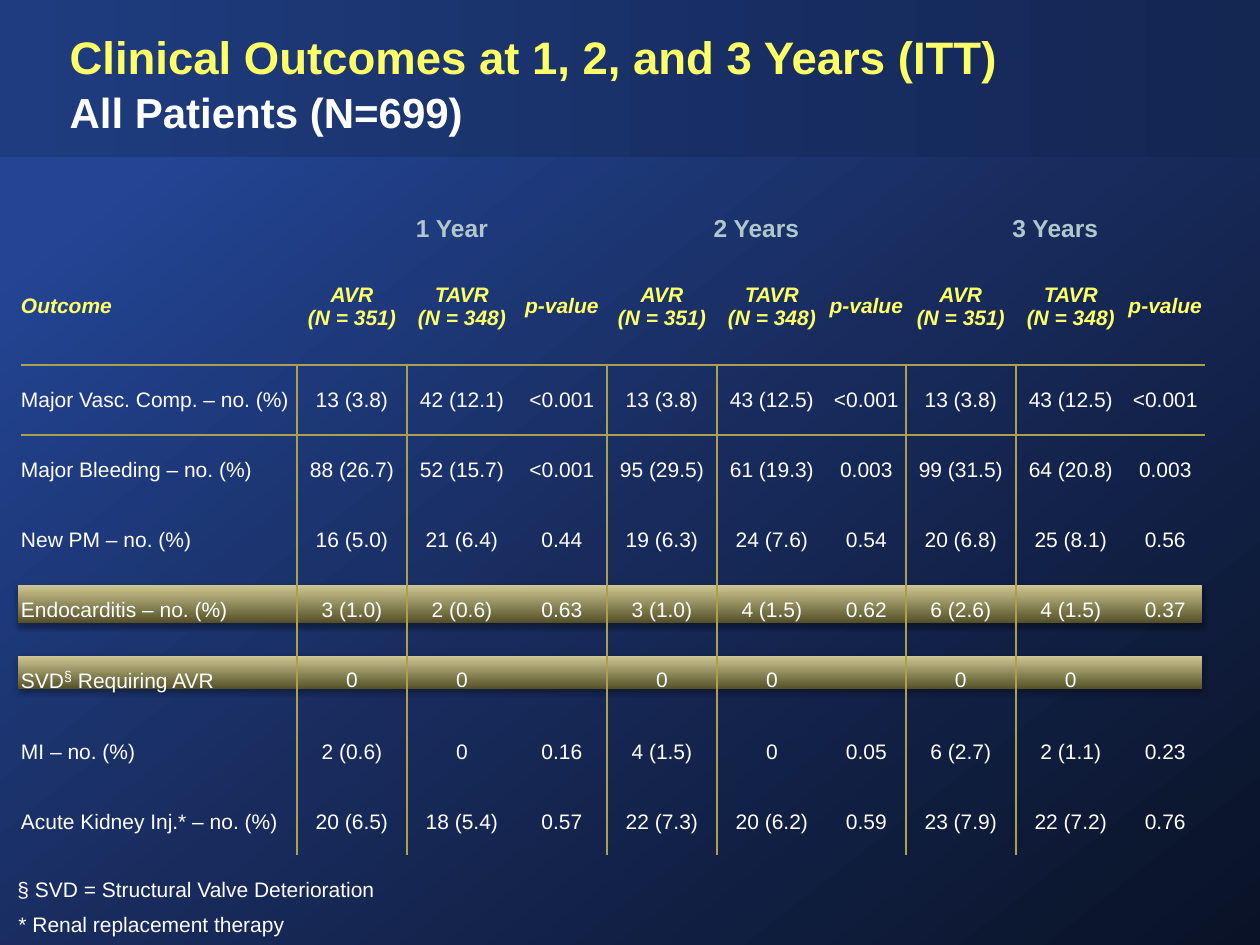
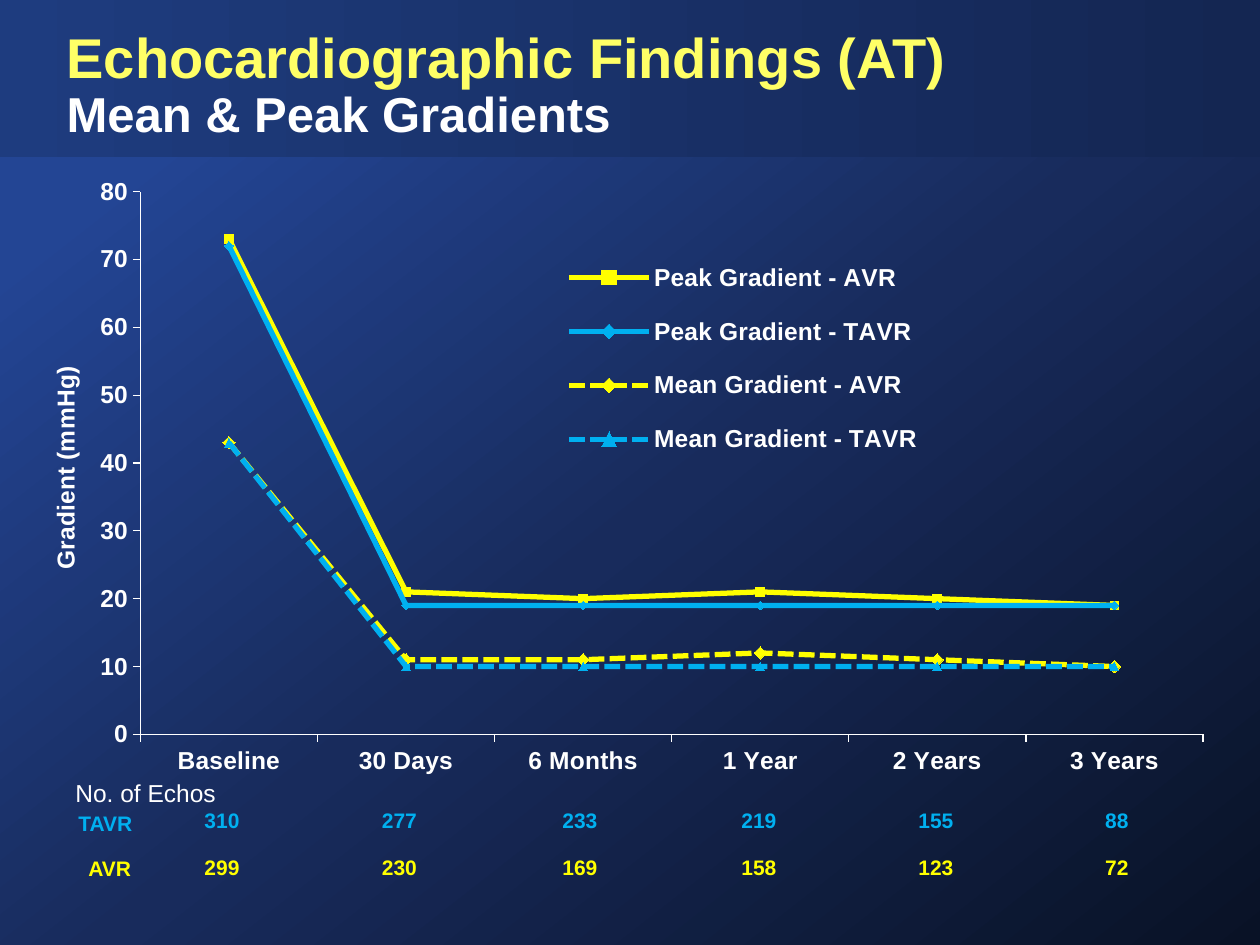
from dataclasses import dataclass

from pptx import Presentation
from pptx.chart.data import CategoryChartData
from pptx.dml.color import RGBColor
from pptx.enum.chart import XL_CHART_TYPE, XL_LEGEND_POSITION, XL_MARKER_STYLE, XL_TICK_MARK
from pptx.enum.dml import MSO_LINE
from pptx.enum.shapes import MSO_SHAPE
from pptx.enum.text import MSO_ANCHOR, PP_ALIGN
from pptx.oxml import parse_xml
from pptx.oxml.ns import nsdecls, qn
from pptx.util import Pt

LEFT, CENTER = PP_ALIGN.LEFT, PP_ALIGN.CENTER
MIDDLE = MSO_ANCHOR.MIDDLE
RECT = MSO_SHAPE.RECTANGLE
LINE_MARKERS = XL_CHART_TYPE.LINE_MARKERS
LEGEND_RIGHT = XL_LEGEND_POSITION.RIGHT
OUTSIDE = XL_TICK_MARK.OUTSIDE
SQUARE, DIAMOND, TRIANGLE = XL_MARKER_STYLE.SQUARE, XL_MARKER_STYLE.DIAMOND, XL_MARKER_STYLE.TRIANGLE
SOLID, DASH = MSO_LINE.SOLID, MSO_LINE.SQUARE_DOT
NO_STYLE = "{2D5ABB26-0587-4C30-8999-92F81FD0307C}"
TITLE_ONLY = 5
PX = 914400 / 126


@dataclass(frozen=True)
class Theme:
    font: str = "Arial"
    white: str = "FFFFFF"
    heading: str = "FFFF66"
    period: str = "B0C8CD"
    rule: str = "AAA04E"
    avr: str = "FFFF00"
    tavr: str = "00B0F0"
    backdrop: tuple = ((14, "234594"), (53, "182B5C"), (100, "091226"))
    band: tuple = ((0, "1E3C7F"), (100, "142652"))
    highlight: tuple = ((0, "555027"), (100, "CEC793"))
    body: int = 12
    label: int = 14
    title_leading: int = 30


def emu(*lengths):
    return [round(n * PX) for n in lengths]


def rgb(color):
    return RGBColor.from_string(color)


def place(parent, x, y, w=None, h=None, inner=False):
    old = parent.find(qn("c:layout"))
    if old is not None:
        parent.remove(old)
    target = '<c:layoutTarget val="inner"/>' if inner else ""
    sizes = "".join(f'<c:{k} val="{v}"/>' for k, v in (("x", x), ("y", y), ("w", w), ("h", h)) if v is not None)
    layout = parse_xml(
        f'<c:layout {nsdecls("c")}><c:manualLayout>{target}<c:xMode val="edge"/>'
        f'<c:yMode val="edge"/>{sizes}</c:manualLayout></c:layout>')
    overlay = parent.find(qn("c:overlay"))
    if overlay is None:
        parent.insert(0, layout)
    else:
        overlay.addprevious(layout)


class Deck:
    def __init__(self, theme):
        self.theme = theme
        self.prs = Presentation()
        self.prs.slide_width, self.prs.slide_height = emu(1260, 945)
        self.layout = self.prs.slide_layouts[TITLE_ONLY]
        self.s = None

    def slide(self):
        first = self.s is None
        self.s = self.prs.slides.add_slide(self.layout)
        if first:
            shared = (self.gradient_box(0, 0, 1260, 945, self.theme.backdrop, 52),
                      self.gradient_box(0, 0, 1260, 157, self.theme.band, 0))
            for i, sp in enumerate(shared):
                self.layout.shapes.element.insert(2 + i, sp.element)

    def format(self, p, size, color, bold=False, italic=False, align=LEFT):
        p.alignment = align
        for r in p.runs:
            r.font.name = self.theme.font
            r.font.size = Pt(size)
            r.font.bold = bold
            r.font.italic = italic
            r.font.color.rgb = rgb(color)

    def title(self, x, y, w, h, heading, subtitle, sizes):
        sp = self.s.shapes.title
        sp.left, sp.top, sp.width, sp.height = emu(x, y, w, h)
        tf = sp.text_frame
        tf.text = f"{heading}\v{subtitle}"
        tf.vertical_anchor = MIDDLE
        p = tf.paragraphs[0]
        p.line_spacing = Pt(self.theme.title_leading)
        self.format(p, sizes[0], self.theme.heading, bold=True)
        r = p.runs[1]
        r.font.size = Pt(sizes[1])
        r.font.color.rgb = rgb(self.theme.white)

    def gradient_box(self, x, y, w, h, stops, angle, shadow=False):
        sp = self.s.shapes.add_shape(RECT, *emu(x, y, w, h))
        sp.shadow.inherit = False
        sp.line.fill.background()
        sp.fill.background()
        gs = "".join(f'<a:gs pos="{pos * 1000}"><a:srgbClr val="{c}"/></a:gs>' for pos, c in stops)
        spPr = sp.element.spPr
        spPr.replace(spPr.find(qn("a:noFill")), parse_xml(
            f'<a:gradFill {nsdecls("a")} rotWithShape="1"><a:gsLst>{gs}</a:gsLst>'
            f'<a:lin ang="{angle * 60000}" scaled="0"/></a:gradFill>'))
        if shadow:
            spPr.find(qn("a:effectLst")).append(parse_xml(
                f'<a:outerShdw {nsdecls("a")} blurRad="40000" dist="23000" dir="5400000" rotWithShape="0">'
                '<a:srgbClr val="000000"><a:alpha val="35000"/></a:srgbClr></a:outerShdw>'))
        return sp

    def text(self, x, y, w, h, text, size, color, bold=False, wrap=True):
        tf = self.s.shapes.add_textbox(*emu(x, y, w, h)).text_frame
        tf.word_wrap = wrap
        tf.text = text
        self.format(tf.paragraphs[0], size, color, bold)

    def table(self, x, y, cols, rows):
        frame = self.s.shapes.add_table(len(rows), len(cols), *emu(x, y, sum(cols), sum(rows)))
        table = frame.table
        table.first_row = table.horz_banding = False
        frame.element.find(".//" + qn("a:tableStyleId")).text = NO_STYLE
        for col, width in zip(table.columns, emu(*cols)):
            col.width = width
        for row, height in zip(table.rows, emu(*rows)):
            row.height = height
        for cell in table.iter_cells():
            cell.fill.background()
            cell.vertical_anchor = MIDDLE
        return table

    def cell(self, cell, text, size, color, bold=False, italic=False, align=CENTER, inset=5, spacing=None):
        cell.margin_left, cell.margin_right, cell.margin_top, cell.margin_bottom = emu(inset, inset, 0, 0)
        cell.text = text
        for p in cell.text_frame.paragraphs:
            self.format(p, size, color, bold, italic, align)
            if spacing:
                p.line_spacing = spacing

    def borders(self, cell, **widths):
        tcPr = cell._tc.get_or_add_tcPr()
        sides = [side for side in "LRTB" if widths.get(side)]
        for i, side in enumerate(sides):
            tcPr.insert(i, parse_xml(
                f'<a:ln{side} {nsdecls("a")} w="{Pt(widths[side])}"><a:solidFill>'
                f'<a:srgbClr val="{self.theme.rule}"/></a:solidFill></a:ln{side}>'))

    def line_chart(self, x, y, w, h, cats, series, axis_title):
        data = CategoryChartData()
        data.categories = cats
        for name, values, *_ in series:
            data.add_series(name, values)
        chart = self.s.shapes.add_chart(LINE_MARKERS, *emu(x, y, w, h), data).chart
        white = rgb(self.theme.white)
        chart.has_title = False
        font = chart.font
        font.name, font.size, font.bold = self.theme.font, Pt(self.theme.label), True
        font.color.rgb = white
        chart.plots[0].vary_by_categories = False
        for ser, (_, _, color, dash, marker, size) in zip(chart.plots[0].series, series):
            ser.smooth = False
            ser.format.line.color.rgb = rgb(color)
            ser.format.line.width = Pt(3)
            ser.format.line.dash_style = dash
            ser.marker.style, ser.marker.size = marker, size
            ser.marker.format.fill.solid()
            ser.marker.format.fill.fore_color.rgb = rgb(color)
            ser.marker.format.line.color.rgb = rgb(color)
        for axis in (chart.category_axis, chart.value_axis):
            axis.major_tick_mark = OUTSIDE
            axis.has_major_gridlines = False
            axis.format.line.color.rgb = white
        axis = chart.value_axis
        axis.minimum_scale, axis.maximum_scale, axis.major_unit = 0, 80, 10
        tf = axis.axis_title.text_frame
        tf.text = axis_title
        self.format(tf.paragraphs[0], self.theme.label, self.theme.white, bold=True, align=CENTER)
        chart.has_legend = True
        chart.legend.position = LEGEND_RIGHT
        chart.legend.include_in_layout = False
        return chart


def outcomes_slide(deck):
    t = deck.theme
    deck.slide()
    for y, h in ((656, 33), (585, 38)):
        deck.gradient_box(18, y, 1184, h, t.highlight, 270, shadow=True)

    outcomes = [
        ("Major Vasc. Comp. – no. (%)", "13 (3.8)", "42 (12.1)", "<0.001",
         "13 (3.8)", "43 (12.5)", "<0.001", "13 (3.8)", "43 (12.5)", "<0.001"),
        ("Major Bleeding – no. (%)", "88 (26.7)", "52 (15.7)", "<0.001",
         "95 (29.5)", "61 (19.3)", "0.003", "99 (31.5)", "64 (20.8)", "0.003"),
        ("New PM – no. (%)", "16 (5.0)", "21 (6.4)", "0.44",
         "19 (6.3)", "24 (7.6)", "0.54", "20 (6.8)", "25 (8.1)", "0.56"),
        ("Endocarditis – no. (%)", "3 (1.0)", "2 (0.6)", "0.63",
         "3 (1.0)", "4 (1.5)", "0.62", "6 (2.6)", "4 (1.5)", "0.37"),
        ("SVD", "0", "0", "", "0", "0", "", "0", "0", ""),
        ("MI – no. (%)", "2 (0.6)", "0", "0.16",
         "4 (1.5)", "0", "0.05", "6 (2.7)", "2 (1.1)", "0.23"),
        ("Acute Kidney Inj.* – no. (%)", "20 (6.5)", "18 (5.4)", "0.57",
         "22 (7.3)", "20 (6.2)", "0.59", "23 (7.9)", "22 (7.2)", "0.76"),
    ]
    table = deck.table(21, 197, [276, 110, 110, 90] + [110, 110, 79] * 2, [40, 117] + [70] * len(outcomes))
    for i, period in enumerate(("1 Year", "2 Years", "3 Years")):
        cell = table.cell(0, 1 + 3 * i)
        cell.merge(table.cell(0, 3 + 3 * i))
        deck.cell(cell, period, t.label, t.period, bold=True, spacing=1.5)
    headers = ["Outcome"] + ["AVR\n(N = 351)", "TAVR\n(N = 348)", "p-value"] * 3
    for j, header in enumerate(headers):
        cell = table.cell(1, j)
        deck.cell(cell, header, t.body, t.heading, bold=True, italic=True, align=CENTER if j else LEFT, inset=0)
        deck.borders(cell, B=1.5)
    for i, row in enumerate(outcomes):
        for j, value in enumerate(row):
            cell = table.cell(i + 2, j)
            deck.cell(cell, value, t.body, t.white, align=CENTER if j else LEFT,
                      inset=5 if j else 0, spacing=1.15 if i > 4 else None)
            deck.borders(cell, L=1 if j in (1, 4, 7) else 0, R=1 if j in (0, 3, 6) else 0, T=0 if i else 1.5)
    p = table.cell(6, 0).text_frame.paragraphs[0]
    for text in ("§", " Requiring AVR"):
        p.add_run().text = text
    deck.format(p, t.body, t.white)
    mark = p.runs[1].font
    mark.size = Pt(t.label)
    mark._element.set("baseline", "30000")

    deck.title(57, 25, 978, 118, "Clinical Outcomes at 1, 2, and 3 Years (ITT)", "All Patients (N=699)", (26, 24))
    deck.text(6, 905, 294, 38, "* Renal replacement therapy", t.body, t.white, wrap=False)
    deck.text(5, 870, 386, 38, "§ SVD = Structural Valve Deterioration", t.body, t.white, wrap=False)


def gradients_slide(deck):
    t = deck.theme
    deck.slide()
    deck.title(54, 24, 987, 131, "Echocardiographic Findings (AT)", "Mean & Peak Gradients", (32, 28))
    deck.text(66, 804, 403, 38, "TAVR", t.body, t.tavr, bold=True)
    deck.text(76, 849, 404, 38, "AVR", t.body, t.avr, bold=True)

    visits = ["Baseline", "30 Days", "6 Months", "1 Year", "2 Years", "3 Years"]
    series = [
        ("Peak Gradient - AVR", (73, 21, 20, 21, 20, 19), t.avr, SOLID, SQUARE, 5),
        ("Peak Gradient - TAVR", (72, 19, 19, 19, 19, 19), t.tavr, SOLID, DIAMOND, 5),
        ("Mean Gradient - AVR", (43, 11, 11, 12, 11, 10), t.avr, DASH, DIAMOND, 7),
        ("Mean Gradient - TAVR", (43, 10, 10, 10, 10, 10), t.tavr, DASH, TRIANGLE, 5),
    ]
    chart = deck.line_chart(33, 159, 1194, 654, visits, series, "Gradient (mmHg)")
    place(chart.element.find(".//" + qn("c:plotArea")), 0.09, 0.05, 0.89, 0.83, inner=True)
    place(chart.legend._element, 0.44, 0.12, 0.31, 0.37)
    place(chart.value_axis.axis_title._element, 0.01, 0.31)

    deck.text(63, 772, 252, 43, "No. of Echos", t.label, t.white)
    echos = [(t.tavr, (310, 277, 233, 219, 155, 88)), (t.avr, (299, 230, 169, 158, 123, 72))]
    table = deck.table(135, 798, [174, 181, 180, 178, 176, 186], [47, 47])
    for i, (color, counts) in enumerate(echos):
        for j, count in enumerate(counts):
            deck.cell(table.cell(i, j), str(count), t.body, color, bold=True)


def main():
    deck = Deck(Theme())
    outcomes_slide(deck)
    gradients_slide(deck)
    deck.prs.save("out.pptx")


if __name__ == "__main__":
    main()
